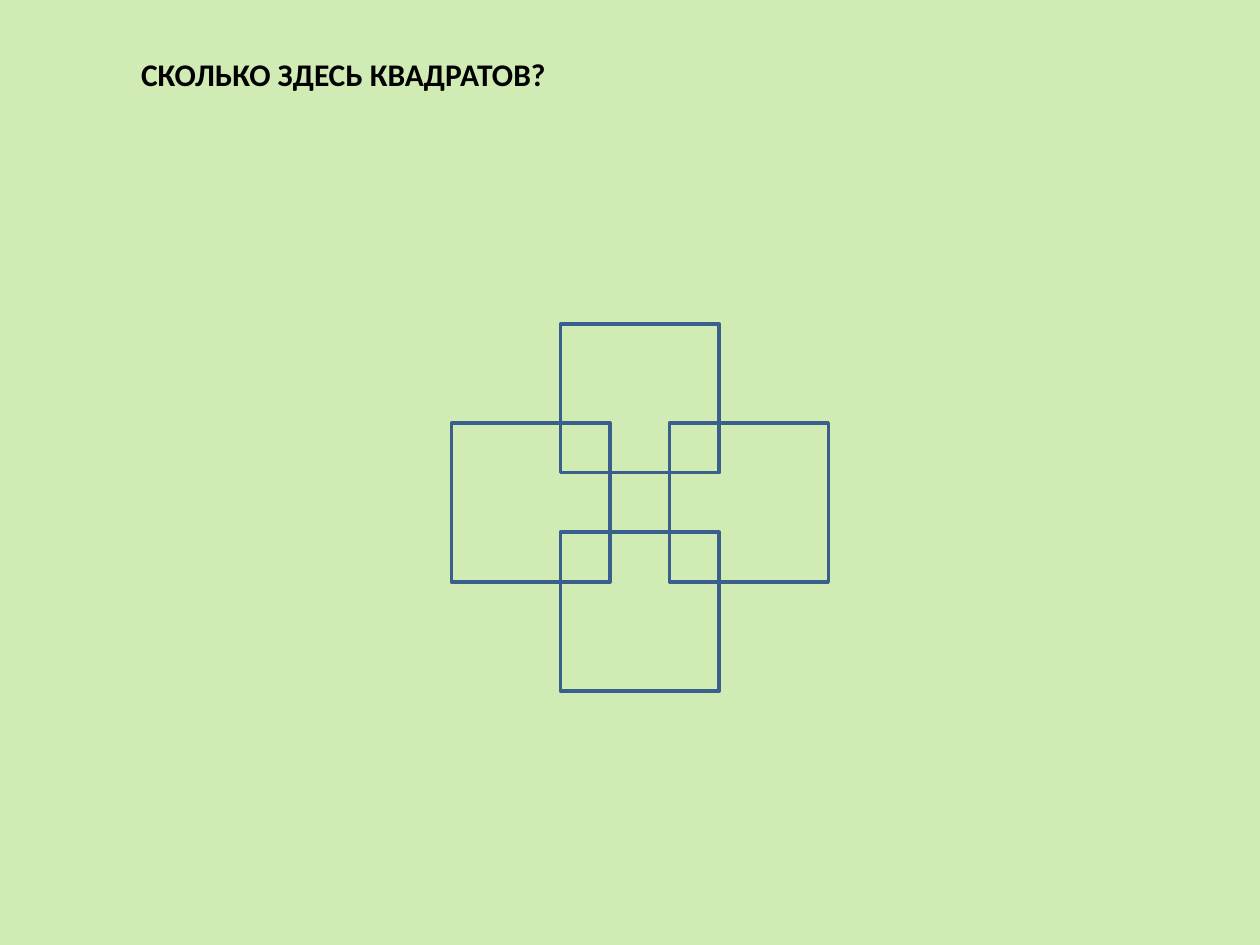
import pptx
import pptx.dml.color
import pptx.enum.shapes
import pptx.enum.text
import pptx.util
from pptx.util import Cm


def colour(value):
    return pptx.dml.color.RGBColor.from_string(value)


def set_title(slide, text, left, top, width, height):
    title = slide.shapes.title
    title.left, title.top, title.width, title.height = left, top, width, height
    frame = title.text_frame
    frame.text = text
    frame.word_wrap = True
    frame.vertical_anchor = pptx.enum.text.MSO_ANCHOR.TOP
    paragraph = frame.paragraphs[0]
    paragraph.alignment = pptx.enum.text.PP_ALIGN.LEFT
    paragraph.font.name = "Calibri"
    paragraph.font.size = pptx.util.Pt(18)
    paragraph.font.bold = True
    paragraph.font.color.rgb = colour("000000")


def add_square_puzzle(slide, left, top, width, height):
    """Draw four overlapping outlines in a cross that fills the box."""
    side = Cm(3.2)
    top_height = Cm(3)  # the top outline is slightly flattened
    middle_x = left + (width - side) // 2
    middle_y = top + Cm(2)
    outlines = [
        (middle_x, top, top_height),
        (middle_x, top + height - side, side),
        (left + width - side, middle_y, side),
        (left, middle_y, side),
    ]
    for x, y, outline_height in outlines:
        square = slide.shapes.add_shape(
            pptx.enum.shapes.MSO_SHAPE.RECTANGLE, x, y, side, outline_height)
        square.shadow.inherit = False
        square.fill.background()
        square.line.color.rgb = colour("3A5F8C")
        square.line.width = pptx.util.Pt(2)


def main():
    presentation = pptx.Presentation()
    presentation.slide_width = Cm(25.4)
    presentation.slide_height = Cm(19.05)
    slide = presentation.slides.add_slide(presentation.slide_layouts[5])
    slide.background.fill.solid()
    slide.background.fill.fore_color.rgb = colour("D1EBB5")
    set_title(slide, "СКОЛЬКО ЗДЕСЬ КВАДРАТОВ?",
              Cm(2.59), Cm(0.99), Cm(21.59), Cm(3.78))
    add_square_puzzle(slide, Cm(9.1), Cm(6.53), Cm(7.6), Cm(7.4))
    presentation.save("out.pptx")


if __name__ == "__main__":
    main()
